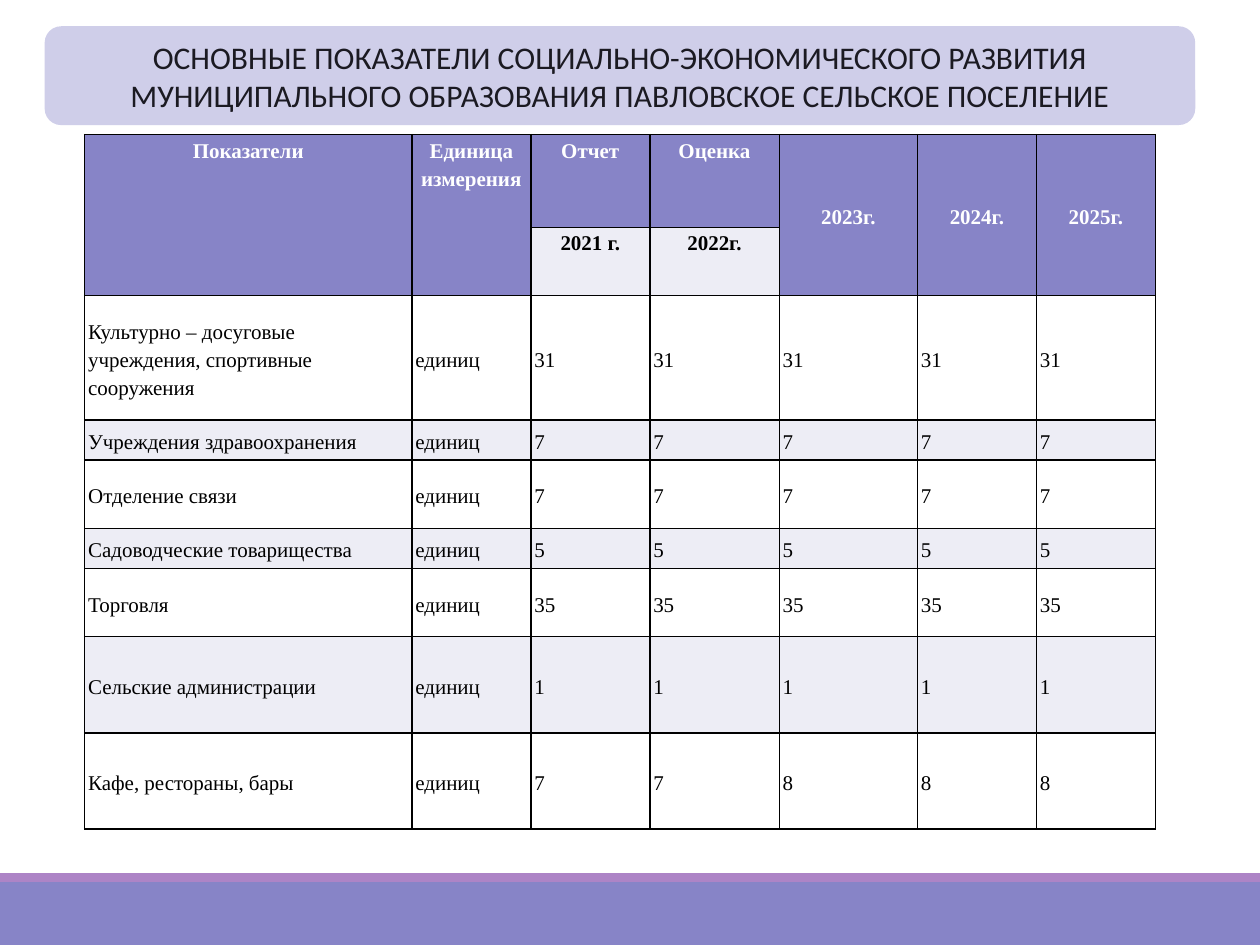
import pptx
import pptx.dml.color
import pptx.enum.shapes
import pptx.enum.text
import pptx.oxml
import pptx.oxml.ns
import pptx.util

Pt = pptx.util.Pt
SHAPES = pptx.enum.shapes.MSO_SHAPE
ALIGN = pptx.enum.text.PP_ALIGN
ANCHOR = pptx.enum.text.MSO_ANCHOR

PURPLE, MAUVE, LILAC, PALE = "8784C7", "AD84C6", "CFCEE9", "EDEDF5"
WHITE, BLACK, INK = "FFFFFF", "000000", "1B1A22"


def color(value):
    return pptx.dml.color.RGBColor.from_string(value)


def write(frame, text, font="Times New Roman", size=12, ink=BLACK, bold=False,
          align=ALIGN.LEFT, spacing=1.2):
    paragraph = frame.paragraphs[0]
    paragraph.alignment = align
    paragraph.line_spacing = spacing
    run = paragraph.add_run()
    run.text = text
    run.font.name = font
    run.font.size = Pt(size)
    run.font.bold = bold
    run.font.color.rgb = color(ink)


class Deck:
    def __init__(self, width, height):
        self.presentation = pptx.Presentation()
        self.presentation.slide_width = Pt(width)
        self.presentation.slide_height = Pt(height)
        self.slide = self.presentation.slides.add_slide(self.presentation.slide_layouts[6])

    def box(self, left, top, width, height, fill, kind=SHAPES.RECTANGLE):
        shape = self.slide.shapes.add_shape(kind, Pt(left), Pt(top), Pt(width), Pt(height))
        shape.shadow.inherit = False
        shape.fill.solid()
        shape.fill.fore_color.rgb = color(fill)
        shape.line.fill.background()
        return shape

    def table(self, left, top, widths, heights):
        frame = self.slide.shapes.add_table(len(heights), len(widths), Pt(left), Pt(top),
                                            Pt(sum(widths)), Pt(sum(heights)))
        table = frame.table
        for column, width in zip(table.columns, widths):
            column.width = Pt(width)
        for row, height in zip(table.rows, heights):
            row.height = Pt(height)
        for cell in table.iter_cells():
            self.borders(cell)
        return table

    def borders(self, cell):
        properties = cell._tc.get_or_add_tcPr()
        for side in ("lnL", "lnR", "lnT", "lnB"):
            properties.append(pptx.oxml.parse_xml(
                f'<a:{side} {pptx.oxml.ns.nsdecls("a")} w="{Pt(1)}"><a:solidFill>'
                f'<a:srgbClr val="{BLACK}"/></a:solidFill></a:{side}>'))

    def cell(self, cell, text, fill, anchor=ANCHOR.MIDDLE, **style):
        cell.fill.solid()
        cell.fill.fore_color.rgb = color(fill)
        cell.vertical_anchor = anchor
        cell.margin_left = cell.margin_right = Pt(2)
        cell.margin_top = cell.margin_bottom = 0
        write(cell.text_frame, text, **style)


def main():
    deck = Deck(720, 540)

    # Footer bands
    deck.box(0, 504, 720, 36, PURPLE)
    deck.box(0, 499, 720, 5, MAUVE)

    # Title
    title = deck.box(25.5, 15, 657.5, 56.5, LILAC, SHAPES.ROUNDED_RECTANGLE)
    title.text_frame.word_wrap = True
    title.text_frame.vertical_anchor = ANCHOR.MIDDLE
    write(title.text_frame,
          "ОСНОВНЫЕ ПОКАЗАТЕЛИ СОЦИАЛЬНО-ЭКОНОМИЧЕСКОГО РАЗВИТИЯ "
          "МУНИЦИПАЛЬНОГО ОБРАЗОВАНИЯ ПАВЛОВСКОЕ СЕЛЬСКОЕ ПОСЕЛЕНИЕ",
          font="Calibri", size=18, ink=INK, align=ALIGN.CENTER, spacing=1.0)

    # Table header: columns without a second line span both header rows
    table = deck.table(48.4, 77, [187, 68, 68, 74, 79, 68, 68],
                       [53, 39, 71, 23, 39, 23, 39, 55, 55])
    headings = ["Показатели", "Единица измерения", "Отчет", "Оценка",
                "2023г.", "2024г.", "2025г."]
    years = {2: "2021 г.", 3: "2022г."}
    header = {"bold": True, "align": ALIGN.CENTER}
    for column, heading in enumerate(headings):
        top_cell, lower_cell = table.cell(0, column), table.cell(1, column)
        anchor = ANCHOR.TOP if column < 4 else ANCHOR.MIDDLE
        deck.cell(top_cell, heading, PURPLE, anchor, ink=WHITE, **header)
        if column in years:
            deck.cell(lower_cell, years[column], PALE, ANCHOR.TOP, **header)
        else:
            top_cell.merge(lower_cell)

    # Table body: banded rows
    indicators = [
        ("Культурно – досуговые учреждения, спортивные сооружения", [31] * 5),
        ("Учреждения здравоохранения", [7] * 5),
        ("Отделение связи", [7] * 5),
        ("Садоводческие товарищества", [5] * 5),
        ("Торговля", [35] * 5),
        ("Сельские администрации", [1] * 5),
        ("Кафе, рестораны, бары", [7, 7, 8, 8, 8]),
    ]
    for row, (name, values) in enumerate(indicators, start=2):
        fill = PALE if row % 2 else WHITE
        for column, text in enumerate([name, "единиц", *values]):
            deck.cell(table.cell(row, column), str(text), fill)

    deck.presentation.save("out.pptx")


if __name__ == "__main__":
    main()
